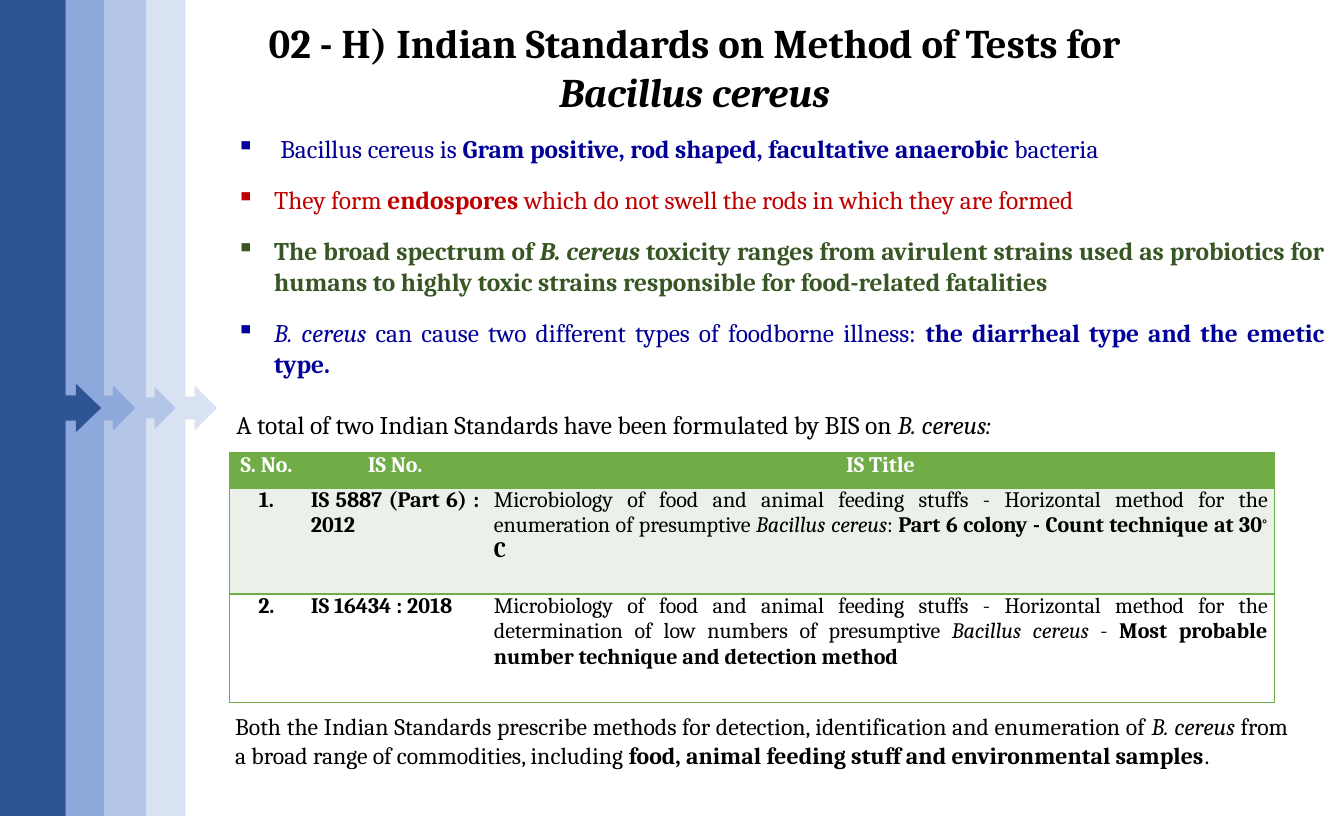
from dataclasses import dataclass
from typing import NamedTuple

from lxml.etree import SubElement
from pptx import Presentation
from pptx.dml.color import RGBColor
from pptx.enum.shapes import MSO_SHAPE as Shape
from pptx.enum.text import MSO_AUTO_SIZE as AutoSize, PP_ALIGN as Align
from pptx.oxml.ns import qn
from pptx.util import Emu, Pt

EMU_PER_PX = 9144  # 100 px to the inch
SLIDE_W, SLIDE_H = 1102, 669
FONT = "Cambria"
COLORS = {
    "black": "000000", "white": "FFFFFF", "navy": "000099", "red": "C00000",
    "dark_green": "385623", "green": "70AD47", "pale_green": "EBF1E8",
    "blue_1": "2F5496", "blue_2": "8DA9DB", "blue_3": "B3C6E7", "blue_4": "D8E2F3",
}


class Run(NamedTuple):
    text: str
    bold: bool = False
    italic: bool = False
    raised: bool = False


@dataclass
class Para:
    runs: list[Run]
    size: int
    color: str = "black"
    align: Align = Align.JUSTIFY
    before: float = 0
    indent: int = 0  # hanging indent of a bulleted paragraph


@dataclass
class TextBox:
    left: int
    top: int
    width: int
    height: int
    paras: list[Para]


@dataclass
class Band:
    left: int
    width: int
    color: str
    shaft: float = 0.25
    head: float = 0.25


# Side bands, from back to front
BANDS = [
    Band(104, 74, "blue_4"),
    Band(75, 69, "blue_3"),
    Band(37, 74, "blue_2", shaft=0.272),
    Band(0, 83, "blue_1", head=0.24),
]

# Text around the table
TITLE = TextBox(183, 10, 773, 91, [Para([
    Run("02 - H) Indian Standards on Method of Tests for ", bold=True),
    Run("Bacillus cereus", bold=True, italic=True),
], 24, align=Align.CENTER)])

FACTS = TextBox(184, 104, 912, 263, [
    Para([
        Run("Bacillus cereus is "),
        Run("Gram positive, rod shaped, facultative anaerobic ", bold=True),
        Run("bacteria"),
    ], 15, "navy", indent=36),
    Para([
        Run("They form "),
        Run("endospores ", bold=True),
        Run("which do not swell the rods in which they are formed"),
    ], 15, "red", before=12.3, indent=31),
    Para([
        Run("The broad spectrum of ", bold=True),
        Run("B. cereus ", bold=True, italic=True),
        Run("toxicity ranges from avirulent strains used as probiotics for humans "
            "to highly toxic strains responsible for food-related fatalities", bold=True),
    ], 15, "dark_green", before=12.3, indent=31),
    Para([
        Run("B. cereus", italic=True),
        Run(" can cause two different types of foodborne illness: "),
        Run("the diarrheal type and the emetic type.", bold=True),
    ], 15, "navy", before=12.3, indent=31),
    Para([
        Run("A total of two Indian Standards have been formulated by BIS on "),
        Run("B. cereus:", italic=True),
    ], 15, before=18),
])

SUMMARY = TextBox(183, 579, 883, 81, [Para([
    Run("Both the Indian Standards prescribe methods for detection, identification "
        "and enumeration of "),
    Run("B. cereus", italic=True),
    Run(" from a broad range of commodities, including "),
    Run("food, animal feeding stuff and environmental samples", bold=True),
    Run("."),
], 14)])

# Table of standards
TABLE_LEFT, TABLE_TOP = 188, 371
COL_WIDTHS = [61, 150, 646]
ROW_HEIGHTS = [29, 87, 89]
ROW_FILLS = ["green", "pale_green", "white"]
TABLE_ROWS = [
    [[Run(name, bold=True)] for name in ("S. No.", "IS No.", "IS Title")],
    [
        [Run("1.", bold=True)],
        [Run("IS 5887 (Part 6) : 2012", bold=True)],
        [
            Run("Microbiology of food and animal feeding stuffs - Horizontal method "
                "for the enumeration of presumptive "),
            Run("Bacillus cereus", italic=True),
            Run(": "),
            Run("Part 6 colony - Count technique at 30", bold=True),
            Run("⸰", bold=True, raised=True),
            Run("C", bold=True),
        ],
    ],
    [
        [Run("2.", bold=True)],
        [Run("IS 16434 : 2018", bold=True)],
        [
            Run("Microbiology of food and animal feeding stuffs - Horizontal method "
                "for the determination of low numbers of presumptive "),
            Run("Bacillus cereus ", italic=True),
            Run("- "),
            Run("Most probable number technique and detection method", bold=True),
        ],
    ],
]


def px(n: int) -> Emu:
    return Emu(n * EMU_PER_PX)


def rgb(name: str) -> RGBColor:
    return RGBColor.from_string(COLORS[name])


def add_bullet(p, para: Para) -> None:
    pPr = p._p.get_or_add_pPr()
    pPr.set("marL", str(px(para.indent)))
    pPr.set("indent", str(-px(para.indent)))
    color = SubElement(pPr, qn("a:buClr"))
    SubElement(color, qn("a:srgbClr"), val=COLORS[para.color])
    SubElement(pPr, qn("a:buChar"), char="▪")


def write_paras(tf, paras: list[Para]) -> None:
    for i, para in enumerate(paras):
        p = tf.add_paragraph() if i else tf.paragraphs[0]
        p.alignment = para.align
        p.space_before = Pt(para.before)
        if para.indent:
            add_bullet(p, para)
        for run in para.runs:
            r = p.add_run()
            r.text = run.text
            r.font.name, r.font.size = FONT, Pt(para.size)
            r.font.bold, r.font.italic = run.bold, run.italic
            r.font.color.rgb = rgb(para.color)
            if run.raised:
                r._r.get_or_add_rPr().set("baseline", "30000")


def add_text(slide, box: TextBox) -> None:
    sp = slide.shapes.add_textbox(px(box.left), px(box.top), px(box.width), px(box.height))
    tf = sp.text_frame
    tf.word_wrap = True
    tf.auto_size = AutoSize.SHAPE_TO_FIT_TEXT
    write_paras(tf, box.paras)


def add_band(slide, band: Band) -> None:
    sp = slide.shapes.add_shape(Shape.RIGHT_ARROW_CALLOUT, px(band.left), 0,
                                px(band.width), px(SLIDE_H))
    for i, value in enumerate((band.shaft, band.head, 0.25, 0.65)):
        sp.adjustments[i] = value
    sp.shadow.inherit = False
    sp.fill.solid()
    sp.fill.fore_color.rgb = rgb(band.color)
    sp.line.fill.background()


def set_borders(cell, first: bool, last: bool) -> None:
    tcPr = cell._tc.get_or_add_tcPr()
    for side, shown in (("L", first), ("R", last), ("T", True), ("B", True)):
        ln = SubElement(tcPr, qn(f"a:ln{side}"), w=str(Pt(1)))
        if shown:
            fill = SubElement(ln, qn("a:solidFill"))
            SubElement(fill, qn("a:srgbClr"), val=COLORS["green"])
        else:
            SubElement(ln, qn("a:noFill"))


def add_standards(slide) -> None:
    table = slide.shapes.add_table(
        len(ROW_HEIGHTS), len(COL_WIDTHS), px(TABLE_LEFT), px(TABLE_TOP),
        px(sum(COL_WIDTHS)), px(sum(ROW_HEIGHTS))).table
    table.first_row = table.horz_banding = False
    for c, width in enumerate(COL_WIDTHS):
        table.columns[c].width = px(width)
    for r, row in enumerate(TABLE_ROWS):
        table.rows[r].height = px(ROW_HEIGHTS[r])
        for c, runs in enumerate(row):
            cell = table.cell(r, c)
            cell.margin_left = cell.margin_right = px(6 if r else 5)
            cell.margin_top = cell.margin_bottom = 0
            set_borders(cell, c == 0, c == len(row) - 1)
            cell.fill.solid()
            cell.fill.fore_color.rgb = rgb(ROW_FILLS[r])
            align = Align.JUSTIFY if r and c else Align.CENTER
            write_paras(cell.text_frame, [Para(runs, 13, "black" if r else "white", align)])


def main() -> None:
    prs = Presentation()
    prs.slide_width, prs.slide_height = px(SLIDE_W), px(SLIDE_H)
    slide = prs.slides.add_slide(prs.slide_layouts[6])
    add_text(slide, FACTS)
    add_standards(slide)
    add_text(slide, SUMMARY)
    for band in BANDS:
        add_band(slide, band)
    add_text(slide, TITLE)
    prs.save("out.pptx")


if __name__ == "__main__":
    main()
